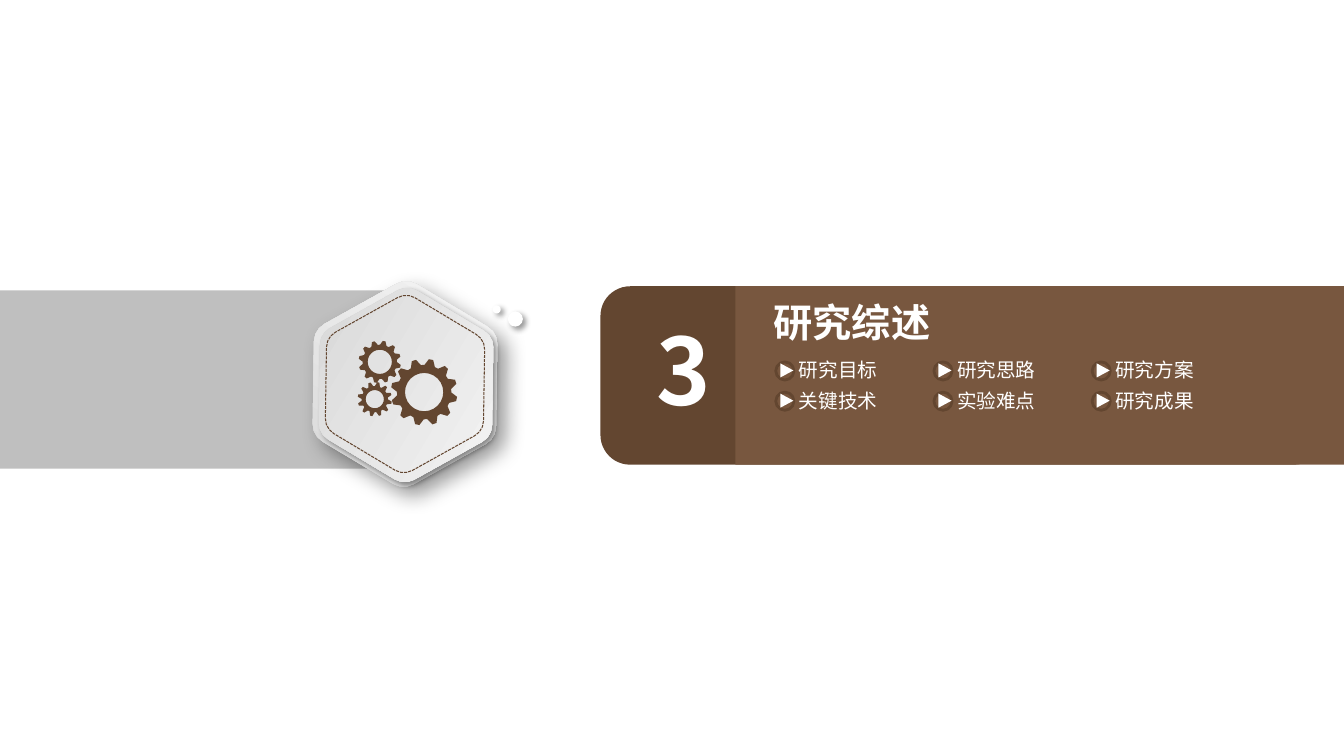
from dataclasses import dataclass
from math import cos, pi, radians, sin, sqrt

from lxml.etree import SubElement
from pptx import Presentation
from pptx.dml.color import RGBColor
from pptx.enum.dml import MSO_LINE
from pptx.enum.shapes import MSO_SHAPE
from pptx.enum.text import MSO_ANCHOR, MSO_AUTO_SIZE, PP_ALIGN
from pptx.oxml.ns import qn
from pptx.util import Inches, Pt


@dataclass(frozen=True)
class Theme:
    """Colours, font and type sizes of the slide."""

    dark: str = "634630"
    brown: str = "78573F"
    grey: str = "BFBFBF"
    silver: str = "D3D3D3"
    pale: str = "F9F9F9"
    white: str = "FFFFFF"
    black: str = "000000"
    font: str = "Noto Sans CJK SC"
    number: int = 66
    title: int = 28
    item: int = 14


THEME = Theme()
TOPICS = (("研究目标", "研究思路", "研究方案"), ("关键技术", "实验难点", "研究成果"))


def color(code):
    """Turn a hex code into a colour."""
    return RGBColor.from_string(code)


def add_shadow(shape, blur, distance):
    """Give a shape a soft shadow to the lower right."""
    effects = shape._element.spPr.find(qn("a:effectLst"))
    outer = SubElement(effects, qn("a:outerShdw"), blurRad=str(Pt(blur)), dist=str(Pt(distance)),
                       dir="2700000", algn="tl", rotWithShape="0")
    shade = SubElement(outer, qn("a:srgbClr"), val=THEME.black)
    SubElement(shade, qn("a:alpha"), val="40000")


def add_block(page, kind, left, top, width, height, fill):
    """Add a flat preset shape."""
    shape = page.shapes.add_shape(kind, Inches(left), Inches(top), Inches(width), Inches(height))
    shape.shadow.inherit = False
    shape.fill.solid()
    shape.fill.fore_color.rgb = color(fill)
    shape.line.fill.background()
    return shape


def add_outline(page, contours):
    """Add a freeform from closed contours given in inches."""
    builder = None
    for contour in contours:
        points = [(Inches(x), Inches(y)) for x, y in contour]
        if builder is None:
            builder = page.shapes.build_freeform(*points[0], scale=1.0)
        else:
            builder.move_to(*points[0])
        builder.add_line_segments(points[1:], close=True)
    shape = builder.convert_to_shape()
    shape.shadow.inherit = False
    shape.line.fill.background()
    return shape


def write_line(box, text, size, bold=False, align=PP_ALIGN.LEFT, inset=0.0):
    """Write one white line, centred vertically, in a box."""
    frame = box.text_frame
    frame.auto_size = MSO_AUTO_SIZE.NONE
    frame.word_wrap = True
    frame.vertical_anchor = MSO_ANCHOR.MIDDLE
    frame.margin_left = frame.margin_right = Inches(inset)
    frame.margin_top = frame.margin_bottom = 0
    para = frame.paragraphs[0]
    para.alignment = align
    para.line_spacing = 1.0
    span = para.add_run()
    span.text = text
    span.font.name = THEME.font
    span.font.size = Pt(size)
    span.font.bold = bold
    span.font.color.rgb = color(THEME.white)
    SubElement(span.font._element, qn("a:ea"), typeface=THEME.font)


def add_text(page, left, top, width, height, text, size, **style):
    """Add a text box with one line."""
    box = page.shapes.add_textbox(Inches(left), Inches(top), Inches(width), Inches(height))
    write_line(box, text, size, **style)


def add_hexagon(page, x, y, height):
    """Add a tilted hexagon with rounded corners."""
    radius = 0.11 * height
    reach = height / sqrt(3) - 2 * radius / sqrt(3)
    points = [
        (x + reach * cos(radians(corner)) + radius * cos(radians(corner + turn)),
         y + reach * sin(radians(corner)) + radius * sin(radians(corner + turn)))
        for corner in range(0, 360, 60) for turn in range(-30, 31, 20)
    ]
    hexagon = add_outline(page, [points])
    hexagon.rotation = 30.9
    return hexagon


def trace_ring(x, y, reaches, start=0.0):
    """List points at equal angles, each at its own reach from the centre."""
    turns = [radians(start) + 2 * pi * step / len(reaches) for step in range(len(reaches))]
    return [(x + reach * cos(turn), y + reach * sin(turn)) for reach, turn in zip(reaches, turns)]


def add_gear(page, x, y, outer, root, hole, teeth=12):
    """Add a ring-shaped gear with evenly spaced teeth."""
    rim = trace_ring(x, y, [outer, outer, root, root] * teeth, start=8.25)
    bore = trace_ring(x, y, [hole] * 24)[::-1]
    gear = add_outline(page, [rim, bore])
    gear.fill.solid()
    gear.fill.fore_color.rgb = color(THEME.dark)


def build_emblem(page, x, y):
    """Build the layered hexagon with its gears and bubbles around a centre."""
    for shift, height, angle, blur, distance in ((0, 1.82, 90, 15, 9), (0.01, 1.72, 0, 4, 3)):
        plate = add_hexagon(page, x + shift, y + shift, height)
        plate.fill.gradient()
        plate.fill.gradient_angle = angle
        for stop, tone, place in zip(plate.fill.gradient_stops, (THEME.silver, THEME.pale), (0, 1)):
            stop.color.rgb = color(tone)
            stop.position = place
        add_shadow(plate, blur, distance)
    stitch = add_hexagon(page, x, y, 1.57)
    stitch.fill.background()
    stitch.line.color.rgb = color(THEME.dark)
    stitch.line.width = Pt(0.75)
    stitch.line.dash_style = MSO_LINE.SQUARE_DOT
    for right, down, size in ((0.87, -0.78, 0.08), (1.02, -0.72, 0.15)):
        bubble = add_block(page, MSO_SHAPE.OVAL, x + right, y + down, size, size, THEME.white)
        add_shadow(bubble, 4, 3)
    for right, down, outer, root, hole in (
        (0.19, 0.08, 0.33, 0.27, 0.19), (-0.25, -0.22, 0.21, 0.17, 0.12), (-0.3, 0.15, 0.17, 0.13, 0.09)
    ):
        add_gear(page, x + right, y + down, outer, root, hole)


def build_topic(page, left, top, text):
    """Build one topic: a round arrow badge and its label."""
    badge = add_block(page, MSO_SHAPE.OVAL, left, top + 0.04, 0.18, 0.18, THEME.brown)
    badge.line.color.rgb = color(THEME.dark)
    badge.line.width = Pt(2)
    arrow = add_block(page, MSO_SHAPE.ISOSCELES_TRIANGLE, left + 0.04, top + 0.06, 0.14, 0.13, THEME.white)
    arrow.rotation = 90
    add_text(page, left + 0.23, top, 1.34, 0.24, text, THEME.item)


def build_panel(page, left, top, width, height):
    """Build the chapter panel with number, title and topics."""
    add_block(page, MSO_SHAPE.ROUNDED_RECTANGLE, left, top, width - 0.2, height, THEME.dark)
    add_block(page, MSO_SHAPE.RECTANGLE, left + 1.34, top, width - 1.34, height, THEME.brown)
    add_text(page, left + 0.47, top + 0.21, 0.72, 1.21, "3", THEME.number, bold=True, align=PP_ALIGN.CENTER)
    title = page.shapes.title
    title.left, title.top = Inches(left + 1.65), Inches(top + 0.08)
    title.width, title.height = Inches(2.99), Inches(0.55)
    write_line(title, "研究综述", THEME.title, bold=True, inset=0.07)
    title.element.getparent().append(title.element)
    for row, names in enumerate(TOPICS):
        for column, name in enumerate(names):
            build_topic(page, left + 1.74 + 1.57 * column, top + 0.71 + 0.3 * row, name)


def main():
    """Build the chapter slide and save it."""
    deck = Presentation()
    deck.slide_width, deck.slide_height = Inches(13.34), Inches(7.5)
    page = deck.slides.add_slide(deck.slide_layouts[5])
    add_block(page, MSO_SHAPE.RECTANGLE, 0, 2.88, 4.07, 1.77, THEME.grey)
    build_emblem(page, 4.02, 3.81)
    build_panel(page, 5.96, 2.84, 7.38, 1.77)
    deck.save("out.pptx")


if __name__ == "__main__":
    main()
